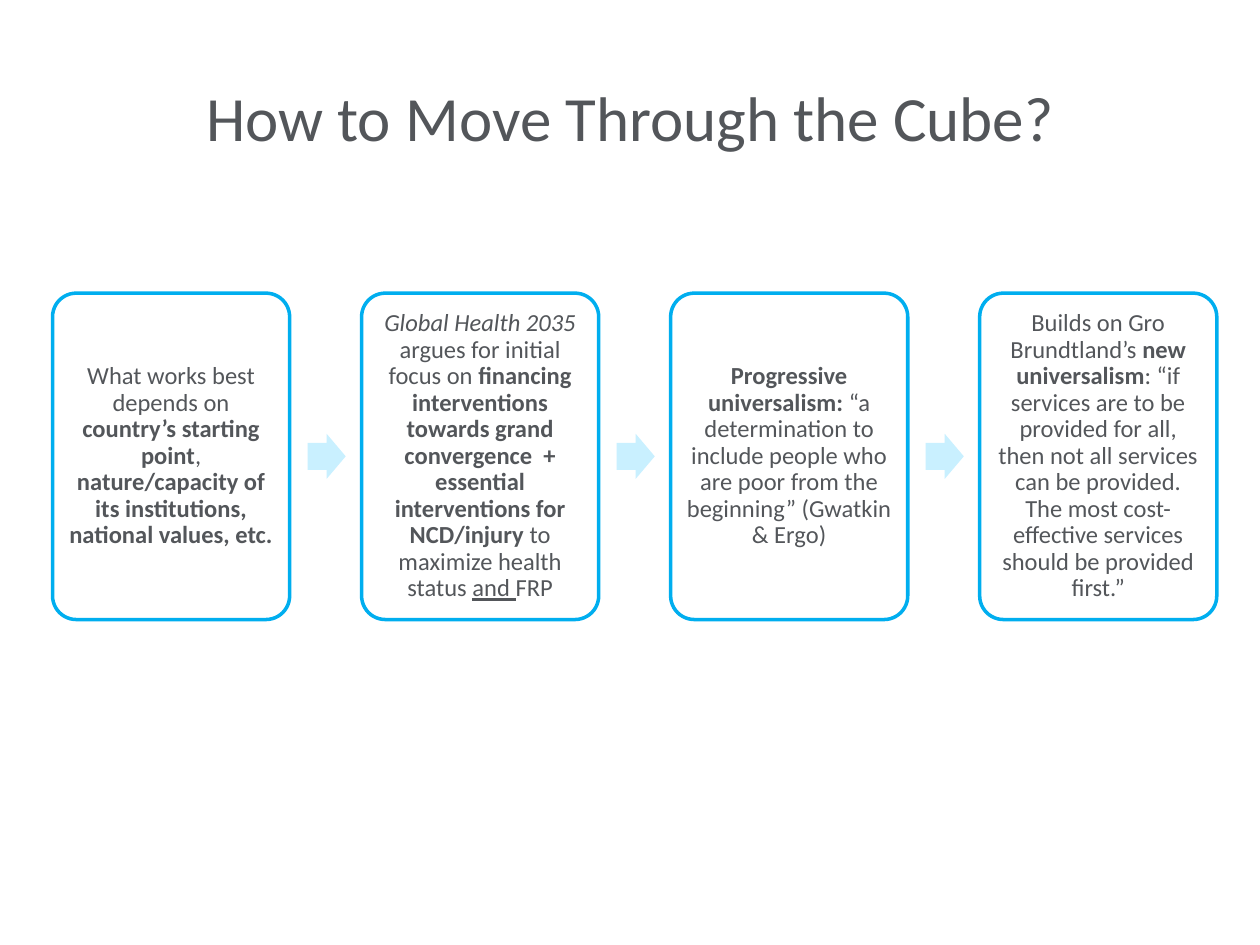
"""Build the slide on moving through the cube: four cards linked by arrows."""
from dataclasses import dataclass, field

from pptx import Presentation
from pptx.dml.color import RGBColor
from pptx.enum.shapes import MSO_SHAPE as Shape
from pptx.enum.text import MSO_ANCHOR as Anchor, PP_ALIGN as Align
from pptx.util import Cm, Pt

INK = RGBColor(0x53, 0x56, 0x5A)
BLUE = RGBColor(0x00, 0xAE, 0xEF)
PALE_BLUE = RGBColor(0xC9, 0xF0, 0xFF)
WHITE = RGBColor(0xFF, 0xFF, 0xFF)

CARD_LEFT, CARD_TOP, CARD_WIDTH, CARD_HEIGHT = 1.06, 5.91, 4.78, 6.58
CARD_PITCH = 6.23
ARROW_OFFSET, ARROW_WIDTH, ARROW_HEIGHT = 5.14, 0.77, 0.91
ARROW_TOP = CARD_TOP + (CARD_HEIGHT - ARROW_HEIGHT) / 2


@dataclass(frozen=True)
class Span:
    text: str
    style: dict = field(default_factory=dict)


BOLD, ITALIC, UNDERLINE = {"bold": True}, {"italic": True}, {"underline": True}

CARDS = [
    [
        Span("What works best depends on "),
        Span("country’s starting point", BOLD),
        Span(", "),
        Span("nature/capacity of its institutions, national values, etc.", BOLD),
    ],
    [
        Span("Global Health 2035 ", ITALIC),
        Span("argues for initial focus on "),
        Span("financing interventions towards grand convergence  + "
             "essential interventions for NCD/injury ", BOLD),
        Span("to maximize health status "),
        Span("and ", UNDERLINE),
        Span("FRP"),
    ],
    [
        Span("Progressive universalism: ", BOLD),
        Span("“a determination to include people who are poor "
             "from the beginning” (Gwatkin & Ergo)"),
    ],
    [
        Span("Builds on Gro Brundtland’s "),
        Span("new universalism", BOLD),
        Span(": “if services are to be provided for all, then not all services "
             "can be provided. The most cost-effective services should be "
             "provided first.”"),
    ],
]


def write(box, spans: list[Span], size: float, spacing: float = 1.0) -> None:
    """Write centred spans into a box."""
    frame = box.text_frame
    frame.word_wrap = True
    frame.vertical_anchor = Anchor.MIDDLE
    para = frame.paragraphs[0]
    para.alignment = Align.CENTER
    para.line_spacing = spacing
    for span in spans:
        run = para.add_run()
        run.text = span.text
        run.font.color.rgb = INK
        values = {"name": "Calibri", "size": Pt(size), **span.style}
        for name, value in values.items():
            setattr(run.font, name, value)


def add_title(page, text: str) -> None:
    """Add the slide title."""
    box = page.shapes.add_textbox(Cm(1.27), Cm(0.76), Cm(22.86), Cm(3.18))
    write(box, [Span(text)], 36)


def add_card(page, left: float, spans: list[Span]) -> None:
    """Add one rounded card with its text."""
    card = page.shapes.add_shape(
        Shape.ROUNDED_RECTANGLE,
        Cm(left), Cm(CARD_TOP), Cm(CARD_WIDTH), Cm(CARD_HEIGHT))
    card.adjustments[0] = 0.1
    card.shadow.inherit = False
    card.fill.solid()
    card.fill.fore_color.rgb = WHITE
    card.line.color.rgb = BLUE
    card.line.width = Pt(2)
    for side in ("left", "top", "right", "bottom"):
        setattr(card.text_frame, f"margin_{side}", Cm(0.15))
    write(card, spans, 14, 0.9)


def add_arrow(page, left: float) -> None:
    """Add one block arrow between two cards."""
    arrow = page.shapes.add_shape(
        Shape.RIGHT_ARROW,
        Cm(left), Cm(ARROW_TOP), Cm(ARROW_WIDTH), Cm(ARROW_HEIGHT))
    arrow.adjustments[0] = 0.6
    arrow.adjustments[1] = 0.5
    arrow.shadow.inherit = False
    arrow.fill.solid()
    arrow.fill.fore_color.rgb = PALE_BLUE
    arrow.line.fill.background()


def main() -> None:
    """Build and save the deck."""
    deck = Presentation()
    deck.slide_width, deck.slide_height = Cm(25.4), Cm(19.05)
    page = deck.slides.add_slide(deck.slide_layouts[6])
    add_title(page, "How to Move Through the Cube?")
    for index, spans in enumerate(CARDS):
        left = CARD_LEFT + index * CARD_PITCH
        add_card(page, left, spans)
        if index < len(CARDS) - 1:
            add_arrow(page, left + ARROW_OFFSET)
    deck.save("out.pptx")


if __name__ == "__main__":
    main()
